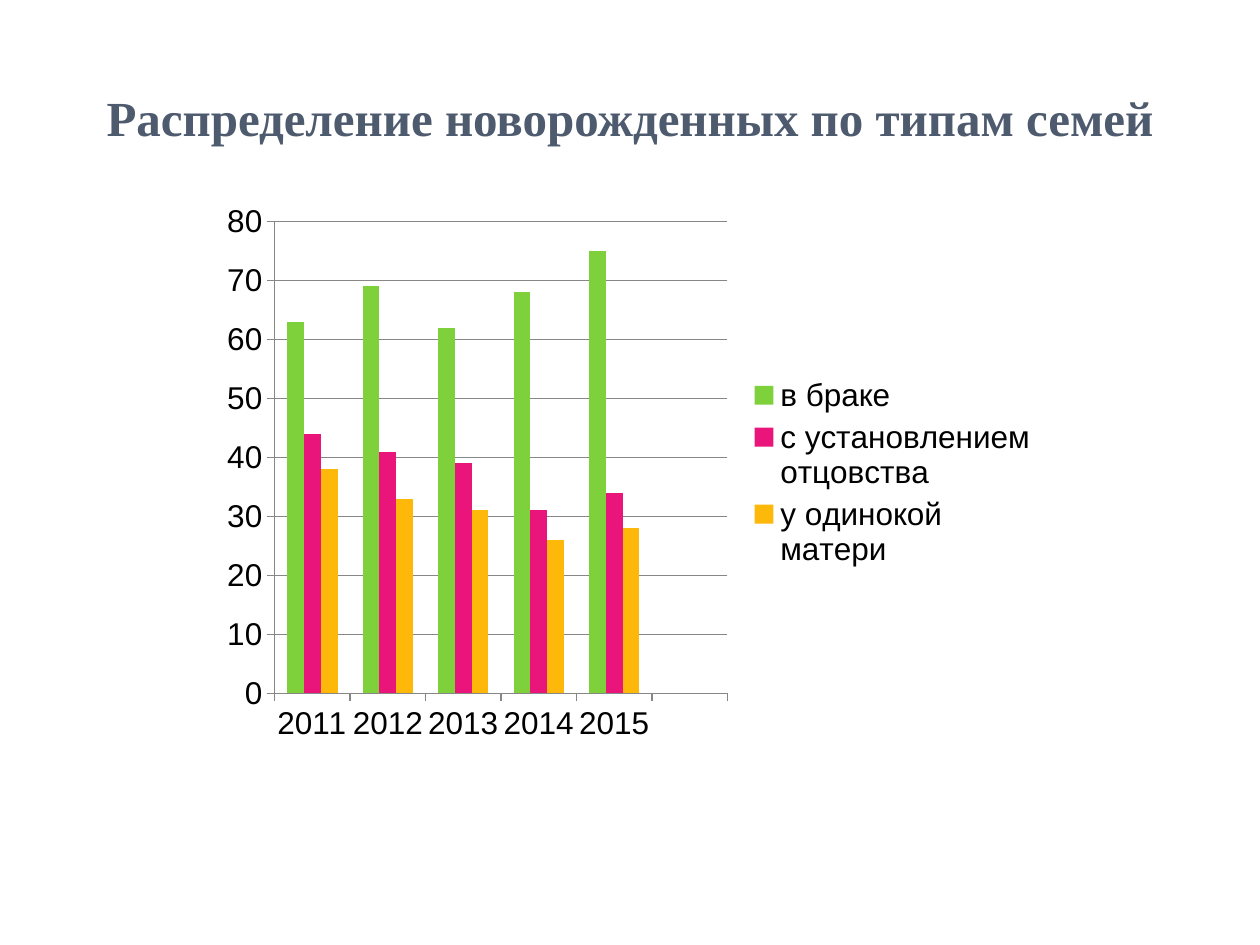
"""Build a slide with a clustered column chart of newborns by family type."""
import pptx
import pptx.chart.data
import pptx.dml.color
import pptx.enum.chart
import pptx.enum.text
import pptx.util

Inches, Pt = pptx.util.Inches, pptx.util.Pt

TITLE = "Распределение новорожденных по типам семей"
YEARS = ["2011", "2012", "2013", "2014", "2015", ""]
SERIES = [
    ("в браке", "green", [63, 69, 62, 68, 75, None]),
    ("с установлением отцовства", "pink", [44, 41, 39, 31, 34, None]),
    ("у одинокой матери", "amber", [38, 33, 31, 26, 28, None]),
]
COLORS = {
    "title": "4E5B6F",
    "text": "000000",
    "line": "878787",
    "green": "7FD13B",
    "pink": "EA157A",
    "amber": "FEB80A",
}


def rgb(name):
    return pptx.dml.color.RGBColor.from_string(COLORS[name])


def style_font(font, name, size, color, bold=False):
    font.name, font.size, font.bold = name, Pt(size), bold
    font.color.rgb = rgb(color)


def style_line(line):
    line.color.rgb = rgb("line")
    line.width = Pt(0.75)


def add_title(slide):
    sp = slide.shapes.add_textbox(Inches(0.5), Inches(0.3), Inches(9), Inches(1.25))
    tf = sp.text_frame
    tf.word_wrap = True
    tf.vertical_anchor = pptx.enum.text.MSO_ANCHOR.MIDDLE
    p = tf.paragraphs[0]
    p.alignment = pptx.enum.text.PP_ALIGN.CENTER
    r = p.add_run()
    r.text = TITLE
    style_font(r.font, "Times New Roman", 28, "title", True)


def add_family_chart(slide):
    data = pptx.chart.data.CategoryChartData()
    data.categories = YEARS
    for name, _, values in SERIES:
        data.add_series(name, values)
    chart = slide.shapes.add_chart(
        pptx.enum.chart.XL_CHART_TYPE.COLUMN_CLUSTERED,
        Inches(1.67), Inches(1.53), Inches(6.67), Inches(4.44), data,
    ).chart
    style_font(chart.font, "Arial", 18, "text")
    chart.has_title = False
    chart.has_legend = True
    chart.legend.position = pptx.enum.chart.XL_LEGEND_POSITION.RIGHT
    chart.legend.include_in_layout = False

    plot = chart.plots[0]
    plot.gap_width, plot.overlap = 150, 0
    plot.vary_by_categories = False
    for series, (_, color, _) in zip(plot.series, SERIES):
        series.format.fill.solid()
        series.format.fill.fore_color.rgb = rgb(color)

    for axis in (chart.category_axis, chart.value_axis):
        axis.major_tick_mark = pptx.enum.chart.XL_TICK_MARK.OUTSIDE
        axis.minor_tick_mark = pptx.enum.chart.XL_TICK_MARK.NONE
        style_line(axis.format.line)
    axis = chart.value_axis
    axis.minimum_scale, axis.maximum_scale, axis.major_unit = 0, 80, 10
    axis.has_major_gridlines = True
    style_line(axis.major_gridlines.format.line)


def main():
    prs = pptx.Presentation()
    prs.slide_width, prs.slide_height = Inches(10), Inches(7.5)
    slide = prs.slides.add_slide(prs.slide_layouts[6])
    add_title(slide)
    add_family_chart(slide)
    prs.save("out.pptx")


if __name__ == "__main__":
    main()
